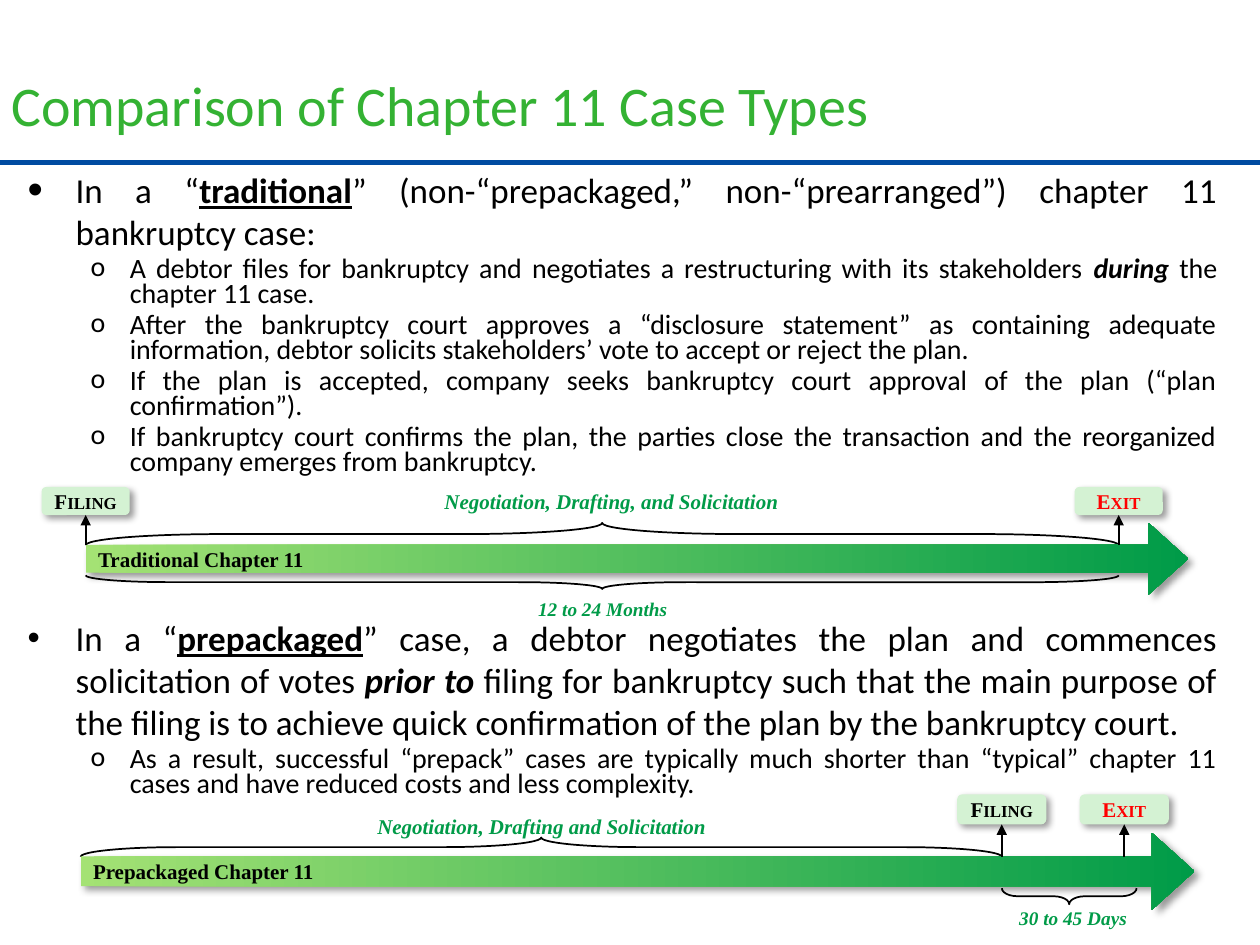
from lxml import etree
from pptx import Presentation
from pptx.dml.color import RGBColor
from pptx.enum.shapes import MSO_CONNECTOR, MSO_SHAPE
from pptx.enum.text import MSO_ANCHOR, MSO_AUTO_SIZE, PP_ALIGN
from pptx.oxml import parse_xml
from pptx.oxml.ns import qn
from pptx.util import Inches, Pt

LINE = MSO_CONNECTOR.STRAIGHT
ARROW, BRACE, ROUND = MSO_SHAPE.RIGHT_ARROW, MSO_SHAPE.RIGHT_BRACE, MSO_SHAPE.ROUNDED_RECTANGLE
MIDDLE, TOP = MSO_ANCHOR.MIDDLE, MSO_ANCHOR.TOP
NO_FIT, GROW = MSO_AUTO_SIZE.NONE, MSO_AUTO_SIZE.SHAPE_TO_FIT_TEXT
LEFT, CENTER, JUSTIFY = PP_ALIGN.LEFT, PP_ALIGN.CENTER, PP_ALIGN.JUSTIFY
SANS, SERIF = "Calibri", "Times New Roman"
BLACK, RED, GREEN, LIME = "000000", "FF0000", "009B48", "A4E274"
SHADOW = """<a:outerShdw xmlns:a="http://schemas.openxmlformats.org/drawingml/2006/main"
 blurRad="50800" dist="38100" dir="2700000" algn="tl" rotWithShape="0">
 <a:srgbClr val="000000"><a:alpha val="40000"/></a:srgbClr></a:outerShdw>"""

ITEMS = [
    (0, 0, [("In a “", ""), ("traditional", "bu"),
            ("” (non-“prepackaged,” non-“prearranged”) chapter 11 bankruptcy case:", "")]),
    (1, 3.2, [("A debtor files for bankruptcy and negotiates a restructuring with its stakeholders ", ""),
              ("during ", "bi"), ("the chapter 11 case.", "")]),
    (1, 3.2, [("After the bankruptcy court approves a “disclosure statement” as containing adequate "
               "information, debtor solicits stakeholders’ vote to accept or reject the plan.", "")]),
    (1, 3.2, [("If the plan is accepted, company seeks bankruptcy court approval of the plan "
               "(“plan confirmation”).", "")]),
    (1, 3.2, [("If bankruptcy court confirms the plan, the parties close the transaction and the "
               "reorganized company emerges from bankruptcy.", "")]),
    (0, 80, [("In a “", ""), ("prepackaged", "bu"),
             ("” case, a debtor negotiates the plan and commences solicitation of votes ", ""),
             ("prior to ", "bi"),
             ("filing for bankruptcy such that the main purpose of the filing is to achieve quick "
              "confirmation of the plan by the bankruptcy court.", "")]),
    (1, 3.2, [("As a result, successful “prepack” cases are typically much shorter than “typical” "
               "chapter 11 cases and have reduced costs and less complexity.", "")]),
]


def tint(code):
    """Turn a hex string into a colour."""
    return RGBColor.from_string(code)


def inch(*sizes):
    """Turn numbers into lengths."""
    return [Inches(size) for size in sizes]


def part(box, x, y, wide, high):
    """Find a part of a box from its shares."""
    left, top, width, height = box
    return left + x * width, top + y * height, wide * width, high * height


def style(para, face, size, color, bold=None, slant=None):
    """Set the font of a paragraph."""
    font = para.font
    font.name, font.size, font.bold, font.italic = face, Pt(size), bold, slant
    font.color.rgb = tint(color)


def write(shape, text, size, color, align=CENTER, slant=None):
    """Put one bold serif line in a shape."""
    para = shape.text_frame.paragraphs[0]
    para.text, para.alignment = text, align
    style(para, SERIF, size, color, True, slant)
    return para


def shade(shape):
    """Drop the outline and cast a soft shadow."""
    shape.line.fill.background()
    shape.shadow.inherit = False
    shape._element.spPr.find(qn("a:effectLst")).append(parse_xml(SHADOW))


def rule(slide, ends, color, width):
    """Draw a straight line without a shadow."""
    line = slide.shapes.add_connector(LINE, *inch(*ends))
    line.line.color.rgb, line.line.width = tint(color), Pt(width)
    etree.SubElement(line._element.spPr, qn("a:effectLst"))
    return line


def head(slide, box):
    """Place the title and the rule below it."""
    title = slide.shapes.title
    title.left, title.top, title.width, title.height = inch(*box)
    frame = title.text_frame
    frame.auto_size, frame.vertical_anchor = NO_FIT, MIDDLE
    para = frame.paragraphs[0]
    para.text, para.alignment = "Comparison of Chapter 11 Case Types", LEFT
    style(para, SANS, 32, "34B233")
    rule(slide, (0, 1.29, 10, 1.29), "004BA1", 3)


def bullet(para, level, large):
    """Give a paragraph its indent and bullet."""
    props = para._p.get_or_add_pPr()
    edge, hang = [(0.38, 0.38), (0.81, 0.31)][level]
    props.set("marL", str(Inches(edge)))
    props.set("indent", str(-Inches(hang)))
    if large:
        etree.SubElement(props, qn("a:buSzPct"), val="125000")
    etree.SubElement(props, qn("a:buFont"), typeface=SANS if level else "Arial")
    etree.SubElement(props, qn("a:buChar"), char="•o"[level])


def body(slide, box):
    """Fill the list placeholder."""
    hold = slide.placeholders[1]
    hold.left, hold.top, hold.width, hold.height = inch(*box)
    frame = hold.text_frame
    frame.auto_size, frame.vertical_anchor = NO_FIT, TOP
    frame.margin_left = Inches(0.1)
    frame.margin_top = frame.margin_right = frame.margin_bottom = 0
    for row, (level, gap, runs) in enumerate(ITEMS):
        para = frame.add_paragraph() if row else frame.paragraphs[0]
        para.level, para.alignment = level, JUSTIFY
        bullet(para, level, row == 0)
        para.space_before = Pt(gap)
        if level:
            para.line_spacing = Pt(14.4)
        style(para, SANS, 16 if level else 20, BLACK)
        for text, marks in runs:
            run = para.add_run()
            run.text = text
            for mark in marks:
                setattr(run.font, {"b": "bold", "i": "italic", "u": "underline"}[mark], True)


def span(slide, box, text, size, start, end, top, high, bend, turn, label):
    """Draw a sideways brace and its label over part of a box."""
    x, y, wide, tall = part(box, start, top, end - start, high)
    brace = slide.shapes.add_shape(
        BRACE, *inch(x + (wide - tall) / 2, y + (tall - wide) / 2, tall, wide))
    brace.rotation = turn
    brace.adjustments[0], brace.adjustments[1] = bend, 0.5
    brace.fill.background()
    brace.line.color.rgb, brace.line.width = tint(BLACK), Pt(1)
    brace.shadow.inherit = False
    mid, above, width = label
    note = slide.shapes.add_textbox(*inch(*part(box, mid - width / 2, above, width, 0.38)))
    note.text_frame.word_wrap, note.text_frame.auto_size = True, GROW
    write(note, text, size, GREEN, slant=True)


def flag(slide, box, text, color, mid):
    """Place a tag and its stem above the arrow."""
    tag = slide.shapes.add_shape(ROUND, *inch(*part(box, mid - 0.04, -0.5, 0.08, 0.39)))
    tag.fill.solid()
    tag.fill.fore_color.rgb = tint("D4F2D3")
    shade(tag)
    frame = tag.text_frame
    frame.vertical_anchor = MIDDLE
    frame.margin_left = frame.margin_right = frame.margin_top = frame.margin_bottom = Inches(0.05)
    para = write(tag, text, 12, color)
    para.runs[0]._r.get_or_add_rPr().set("cap", "small")
    x, y, _, tall = part(box, mid, -0.11, 0, 0.42)
    stem = rule(slide, (x, y + tall, x, y), BLACK, 1)
    stem.end_connect(tag, 2)
    etree.SubElement(stem._element.spPr.get_or_add_ln(), qn("a:tailEnd"), type="triangle")


def track(slide, box, name, flags, spans):
    """Draw a timeline arrow with its flags and spans."""
    for item in spans:
        span(slide, box, *item)
    arrow = slide.shapes.add_shape(ARROW, *inch(*box))
    arrow.adjustments[0], arrow.adjustments[1] = 0.385, 0.553
    arrow.fill.gradient()
    arrow.fill.gradient_angle = 0
    for stop, place, color in zip(arrow.fill.gradient_stops, (0, 1), (LIME, GREEN)):
        stop.position, stop.color.rgb = place, tint(color)
    shade(arrow)
    arrow.text_frame.vertical_anchor = MIDDLE
    write(arrow, name, 12, BLACK, LEFT)
    for item in flags:
        flag(slide, box, *item)


def main():
    """Build the slide."""
    deck = Presentation()
    deck.slide_width, deck.slide_height = inch(10, 7.5)
    slide = deck.slides.add_slide(deck.slide_layouts[1])
    head(slide, (-0.01, 0.45, 9.29, 0.76))
    body(slide, (0.12, 1.34, 9.54, 5.95))
    track(slide, (0.68, 4.15, 8.75, 0.57), "Traditional Chapter 11",
          [("Filing", BLACK, 0), ("Exit", RED, 0.937)],
          [("Negotiation, Drafting, and Solicitation", 12, 0, 0.937, 0, 0.31, 6.18, 270,
            (0.477, -0.56, 0.47)),
           ("12 to 24 Months", 11, 0, 0.937, 0.73, 0.19, 6.18, 90, (0.469, 0.95, 0.16))])
    track(slide, (0.64, 6.61, 8.84, 0.61), "Prepackaged Chapter 11",
          [("Filing", BLACK, 0.827), ("Exit", RED, 0.937)],
          [("Negotiation, Drafting and Solicitation", 12, 0, 0.827, 0.06, 0.25, 5.13, 270,
            (0.414, -0.33, 0.43)),
           ("30 to 45 Days", 11, 0.827, 0.948, 0.72, 0.21, 0.97, 90, (0.891, 0.87, 0.17))])
    deck.save("out.pptx")


if __name__ == "__main__":
    main()
